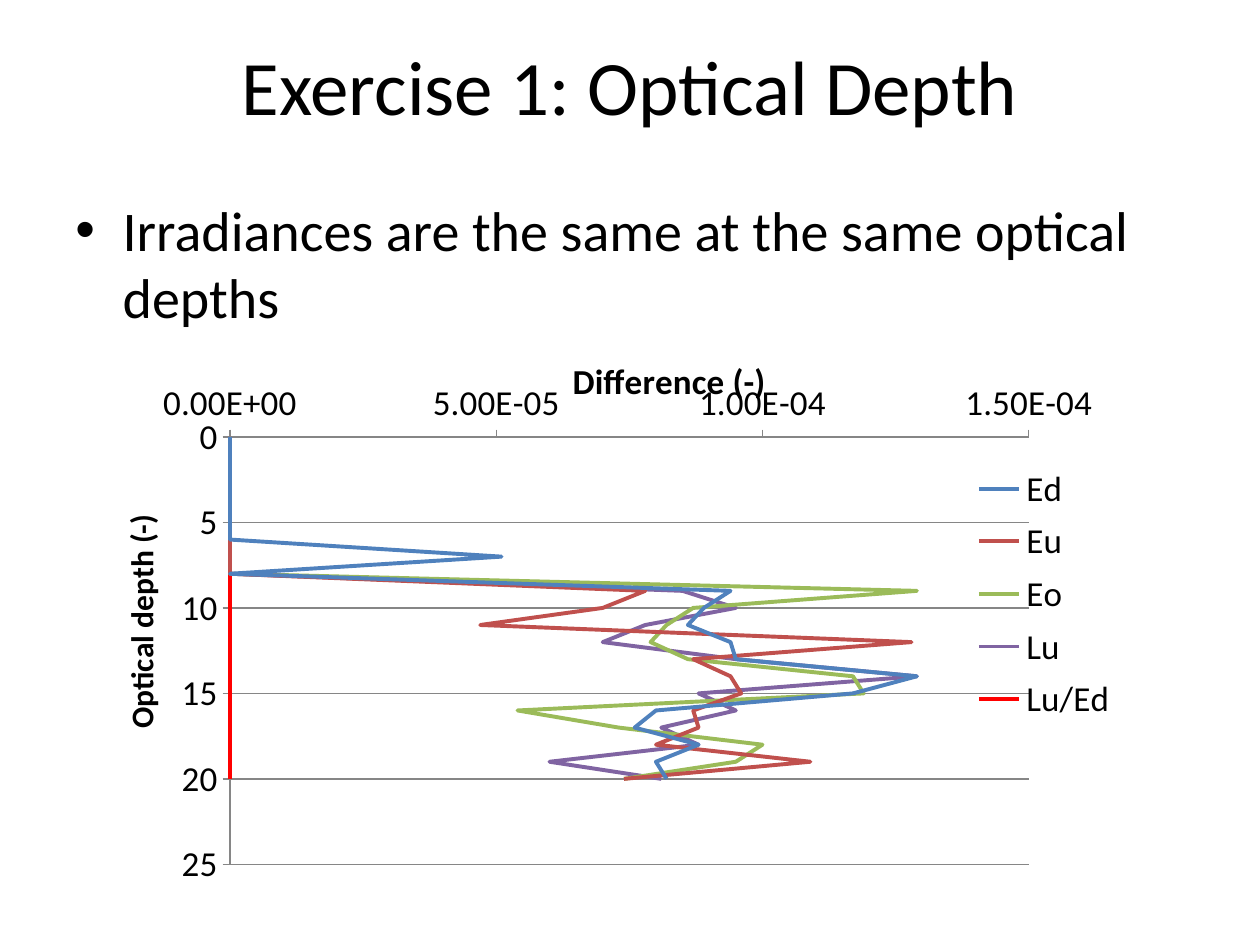
import pptx
import pptx.chart.data
import pptx.dml.color
import pptx.enum.chart
import pptx.enum.text
import pptx.oxml
import pptx.oxml.ns
import pptx.util

Pt = pptx.util.Pt
FONT = "Calibri"
GREY = "868686"
NS = pptx.oxml.ns.nsdecls("c")

# Differences in units of 1e-6, one for each optical depth from 0 to 20
LINES = [
    ("Ed", "4F81BD", [0] * 7 + [51, 0, 94, 89, 86, 94, 95, 129, 117,
                                80, 76, 88, 80, 82]),
    ("Eu", "C0504D", [0] * 9 + [78, 70, 47, 128, 87, 94, 96,
                                87, 88, 80, 109, 74]),
    ("Eo", "9BBB59", [0] * 9 + [129, 87, 82, 79, 86, 117, 119,
                                54, 73, 100, 95, 74]),
    ("Lu", "8064A2", [0] * 9 + [85, 95, 78, 70, 95, 129, 88,
                                95, 81, 88, 60, 81]),
    ("Lu/Ed", "FF0000", [0] * 21),
]


def color(code):
    return pptx.dml.color.RGBColor.from_string(code)


def style(font, size, bold=False, code="000000"):
    font.name = FONT
    font.size = Pt(size)
    font.bold = bold
    font.color.rgb = color(code)


def write(frame, text, size=20, bold=False, align=None, before=0, bullet=False):
    para = frame.paragraphs[0]
    run = para.add_run()
    run.text = text
    style(run.font, size, bold)
    para.alignment = align
    para.space_before = Pt(before)
    if bullet:
        props = para._p.get_or_add_pPr()
        props.set("marL", str(Pt(27)))
        props.set("indent", str(-Pt(27)))
        props.append(pptx.oxml.parse_xml(
            f'<a:buFont {pptx.oxml.ns.nsdecls("a")} typeface="Arial"/>'))
        props.append(pptx.oxml.parse_xml(
            f'<a:buChar {pptx.oxml.ns.nsdecls("a")} char="•"/>'))


def add_box(slide, left, top, width, height, text, anchor, **form):
    box = slide.shapes.add_textbox(Pt(left), Pt(top), Pt(width), Pt(height))
    frame = box.text_frame
    frame.word_wrap = True
    frame.vertical_anchor = anchor
    write(frame, text, **form)


def place(part, after, left, top, width=None, height=None, inner=False):
    """Set a manual layout, in fractions of the chart, behind a child tag."""
    items = [("layoutTarget", "inner")] if inner else []
    items += [("xMode", "edge"), ("yMode", "edge"), ("x", left), ("y", top)]
    if width:
        items += [("w", width), ("h", height)]
    body = "".join(f'<c:{tag} val="{val}"/>' for tag, val in items)
    for old in part.findall(pptx.oxml.ns.qn("c:layout")):
        part.remove(old)
    layout = pptx.oxml.parse_xml(
        f"<c:layout {NS}><c:manualLayout>{body}</c:manualLayout></c:layout>")
    if after:
        part.find(pptx.oxml.ns.qn(after)).addnext(layout)
    else:
        part.insert(0, layout)


def set_axis(axis, title, size, top, step, form, left, high):
    axis.minimum_scale = 0
    axis.maximum_scale = top
    axis.major_unit = step
    axis.major_tick_mark = pptx.enum.chart.XL_TICK_MARK.OUTSIDE
    axis.tick_labels.number_format = form
    axis.tick_labels.number_format_is_linked = False
    style(axis.tick_labels.font, 20)
    axis.format.line.color.rgb = color(GREY)
    axis.format.line.width = Pt(0.75)
    write(axis.axis_title.text_frame, title, size=size, bold=True)
    place(axis.axis_title._element, "c:tx", left, high)


def add_plot(slide):
    data = pptx.chart.data.XyChartData()
    for name, _, diffs in LINES:
        line = data.add_series(name)
        for depth, diff in enumerate(diffs):
            line.add_data_point(round(diff * 1e-6, 6), depth)
    kind = pptx.enum.chart.XL_CHART_TYPE.XY_SCATTER_LINES_NO_MARKERS
    chart = slide.shapes.add_chart(
        kind, Pt(53.3), Pt(187.2), Pt(587.5), Pt(324), data).chart
    style(chart.font, 20)
    chart.has_title = False

    # Series lines
    for line, (_, code, _) in zip(chart.plots[0].series, LINES):
        line.smooth = False
        line.format.line.color.rgb = color(code)
        line.format.line.width = Pt(2.25)

    # Axes, with depth growing downwards
    across, down = chart.category_axis, chart.value_axis
    set_axis(across, "Difference (-)", 20, 0.00015, 0.00005, "0.00E+00", 0.46, 0.04)
    set_axis(down, "Optical depth (-)", 18, 25, 5, "#,##0", 0.02, 0.32)
    across.has_major_gridlines = False
    down.has_major_gridlines = True
    down.major_gridlines.format.line.color.rgb = color(GREY)
    down.major_gridlines.format.line.width = Pt(0.75)
    down.reverse_order = True

    # Legend over the right edge of the plot
    chart.has_legend = True
    legend = chart.legend
    legend.position = pptx.enum.chart.XL_LEGEND_POSITION.RIGHT
    legend.include_in_layout = False
    style(legend.font, 20)
    place(legend._element, "c:legendPos", 0.85, 0.23, 0.15, 0.48)
    area = chart._chartSpace.chart.plotArea
    place(area, None, 0.133, 0.193, 0.777, 0.754, inner=True)


def main():
    deck = pptx.Presentation()
    deck.slide_width, deck.slide_height = Pt(720), Pt(540)
    slide = deck.slides.add_slide(deck.slide_layouts[6])
    anchor = pptx.enum.text.MSO_ANCHOR
    # Heading and bullet
    add_box(slide, 36, 3.6, 648, 90, "Exercise 1: Optical Depth", anchor.MIDDLE,
            size=44, align=pptx.enum.text.PP_ALIGN.CENTER)
    add_box(slide, 36, 108, 648, 356.4,
            "Irradiances are the same at the same optical depths", anchor.TOP,
            size=32, before=6.4, bullet=True)
    # Depth profile
    add_plot(slide)
    deck.save("out.pptx")


if __name__ == "__main__":
    main()
